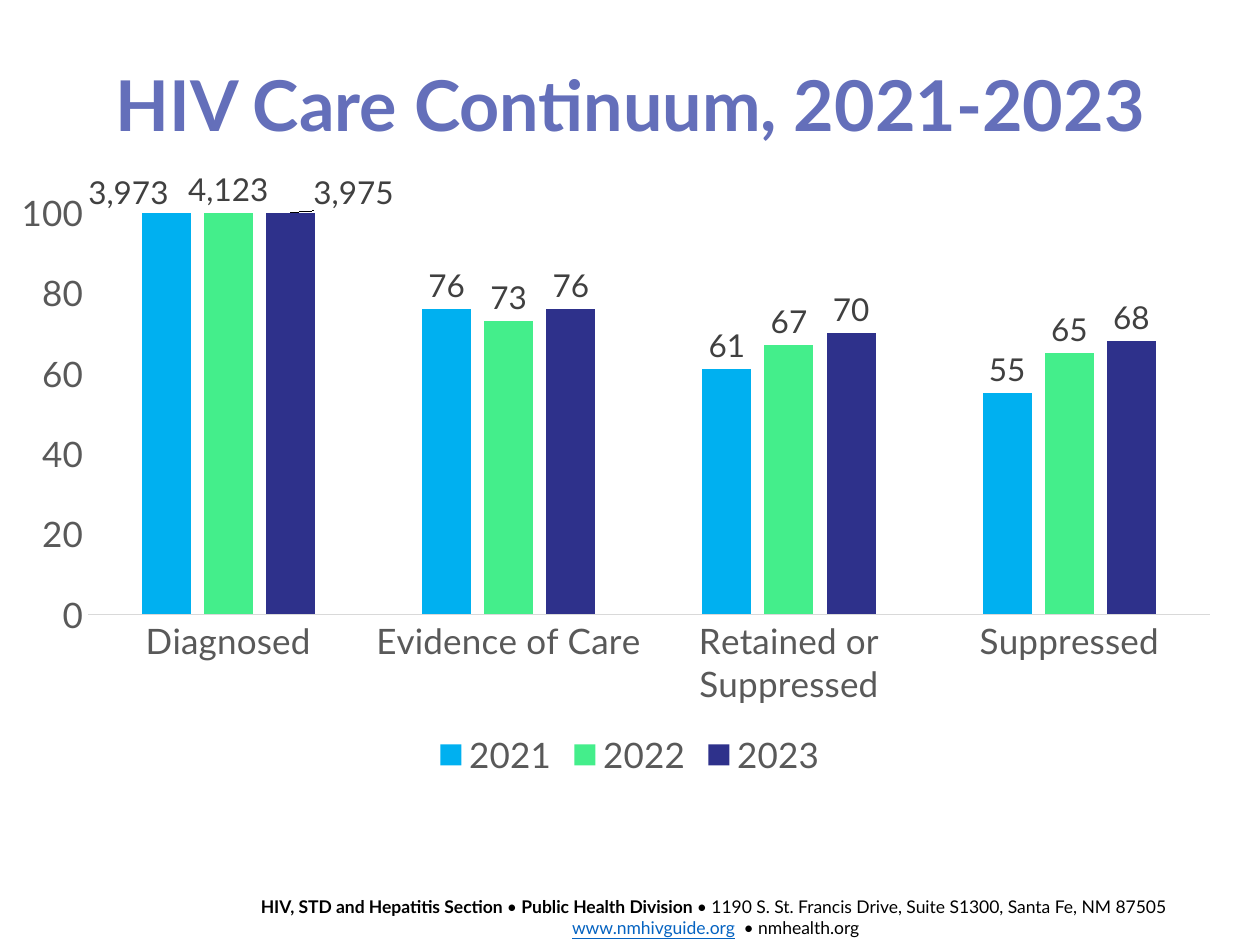
from dataclasses import dataclass

from pptx import Presentation
from pptx.chart.chart import Chart
from pptx.chart.data import CategoryChartData
from pptx.chart.series import BarSeries
from pptx.dml.color import RGBColor
from pptx.enum.chart import XL_CHART_TYPE, XL_LABEL_POSITION, XL_LEGEND_POSITION, XL_TICK_MARK
from pptx.enum.text import MSO_ANCHOR, PP_ALIGN
from pptx.oxml import parse_xml
from pptx.oxml.ns import nsdecls
from pptx.slide import Slide
from pptx.text.text import Font
from pptx.util import Inches, Pt

COLUMNS = XL_CHART_TYPE.COLUMN_CLUSTERED
OUTSIDE_END = XL_LABEL_POSITION.OUTSIDE_END
BOTTOM = XL_LEGEND_POSITION.BOTTOM
NO_TICK = XL_TICK_MARK.NONE
CENTER = PP_ALIGN.CENTER
MIDDLE = MSO_ANCHOR.MIDDLE


@dataclass(frozen=True)
class Theme:
    font: str = "Lato"
    title: str = "646FBA"
    footer: str = "000000"
    link: str = "0563C1"
    axis_text: str = "595959"
    axis_line: str = "D9D9D9"
    label: str = "404040"
    title_size: int = 40
    axis_size: int = 20
    label_size: int = 18
    footer_size: int = 10


@dataclass(frozen=True)
class YearSeries:
    year: str
    percents: tuple[int, ...]
    color: str
    diagnosed: str
    label_shift: tuple[float, float]


@dataclass(frozen=True)
class FooterSpan:
    text: str
    bold: bool = False
    link: bool = False


THEME = Theme()
STAGES = ("Diagnosed", "Evidence of Care", "Retained or Suppressed", "Suppressed")
YEARS = (
    YearSeries("2021", (100, 76, 61, 55), "00B0F0", "3,973", (-0.03, 0.005)),
    YearSeries("2022", (100, 73, 67, 65), "44EE8B", "4,123", (0, 0)),
    YearSeries("2023", (100, 76, 70, 68), "2E318B", "3,975", (0.05, 0.005)),
)
FOOTER_LINES = (
    (
        FooterSpan("HIV, STD and Hepatitis Section ", bold=True),
        FooterSpan("• "),
        FooterSpan("Public Health Division ", bold=True),
        FooterSpan("• 1190 S. St. Francis Drive, Suite S1300, Santa Fe, NM 87505 "),
    ),
    (FooterSpan("www.nmhivguide.org", link=True), FooterSpan("  • nmhealth.org")),
)


def style_font(font: Font, size: int, color: str) -> None:
    font.name = THEME.font
    font.size = Pt(size)
    font.color.rgb = RGBColor.from_string(color)


def layout_xml(x: float, y: float, size: tuple[float, float] | None = None):
    """Return a manual layout: an inner plot area with a size, otherwise a label shift."""
    modes, extent = "", ""
    if size:
        modes = '<c:layoutTarget val="inner"/><c:xMode val="edge"/><c:yMode val="edge"/>'
        extent = f'<c:w val="{size[0]}"/><c:h val="{size[1]}"/>'
    return parse_xml(
        f'<c:layout {nsdecls("c")}><c:manualLayout>{modes}'
        f'<c:x val="{x}"/><c:y val="{y}"/>{extent}</c:manualLayout></c:layout>'
    )


def add_title(page: Slide) -> None:
    title = page.shapes.title
    title.left, title.top = Inches(0.69), Inches(0.4)
    title.width, title.height = Inches(8.62), Inches(0.92)
    title.text_frame.vertical_anchor = MIDDLE
    para = title.text_frame.paragraphs[0]
    para.text = "HIV Care Continuum, 2021-2023"
    para.alignment = CENTER
    para.line_spacing = 0.9
    style_font(para.font, THEME.title_size, THEME.title)
    para.font.bold = True


def add_footer(page: Slide) -> None:
    box = page.shapes.add_textbox(Inches(1.71), Inches(7.06), Inches(7.94), Inches(0.44))
    box.text_frame.word_wrap = True
    para = box.text_frame.paragraphs[0]
    para.alignment = CENTER
    for number, line in enumerate(FOOTER_LINES):
        if number:
            para.add_line_break()
        for part in line:
            span = para.add_run()
            span.text = part.text
            style_font(span.font, THEME.footer_size, THEME.link if part.link else THEME.footer)
            span.font.bold = part.bold
            span.font.underline = part.link


def style_axes(chart: Chart) -> None:
    stages, percent = chart.category_axis, chart.value_axis
    for axis in (stages, percent):
        axis.major_tick_mark = axis.minor_tick_mark = NO_TICK
        axis.has_major_gridlines = False
        style_font(axis.tick_labels.font, THEME.axis_size, THEME.axis_text)
    stages.format.line.color.rgb = RGBColor.from_string(THEME.axis_line)
    stages.format.line.width = Pt(0.75)
    percent.format.line.fill.background()
    percent.minimum_scale, percent.maximum_scale, percent.major_unit = 0, 100, 20
    percent.tick_labels.number_format = "0"
    percent.tick_labels.number_format_is_linked = False


def style_series(series: BarSeries, year: YearSeries) -> None:
    """Colour the columns and label the first one with its count of people."""
    series.format.fill.solid()
    series.format.fill.fore_color.rgb = RGBColor.from_string(year.color)
    labels = series.data_labels
    labels.show_value = True
    labels.number_format = "0"
    labels.number_format_is_linked = False
    labels.position = OUTSIDE_END
    style_font(labels.font, THEME.label_size, THEME.label)

    count = series.points[0].data_label
    para = count.text_frame.paragraphs[0]
    span = para.add_run()
    span.text = year.diagnosed
    style_font(span.font, THEME.label_size, THEME.label)
    count.position = OUTSIDE_END
    if any(year.label_shift):
        index = series.points[0].data_label._dLbl.find("{*}idx")
        index.addnext(layout_xml(*year.label_shift))


def add_continuum_chart(page: Slide) -> None:
    data = CategoryChartData(number_format="0")
    data.categories = STAGES
    for year in YEARS:
        data.add_series(year.year, year.percents)
    frame = page.shapes.add_chart(COLUMNS, 0, Inches(1.24), Inches(10), Inches(4.98), data)
    chart = frame.chart
    chart.has_title = False
    style_font(chart.font, THEME.footer_size, THEME.footer)
    chart.has_legend = True
    chart.legend.position = BOTTOM
    chart.legend.include_in_layout = False
    style_font(chart.legend.font, THEME.axis_size, THEME.axis_text)
    style_axes(chart)

    plot = chart.plots[0]
    plot.vary_by_categories = False
    plot.gap_width, plot.overlap = 219, -27
    for series, year in zip(plot.series, YEARS):
        style_series(series, year)

    plot_area = chart.element.find(".//{*}plotArea")
    for layout in plot_area.findall("{*}layout"):
        plot_area.remove(layout)
    plot_area.insert(0, layout_xml(0.07, 0.09, (0.89, 0.64)))


def main() -> None:
    deck = Presentation()
    deck.slide_width, deck.slide_height = Inches(10), Inches(7.5)
    page = deck.slides.add_slide(deck.slide_layouts.get_by_name("Title Only"))
    add_footer(page)
    add_title(page)
    add_continuum_chart(page)
    deck.save("out.pptx")


if __name__ == "__main__":
    main()
